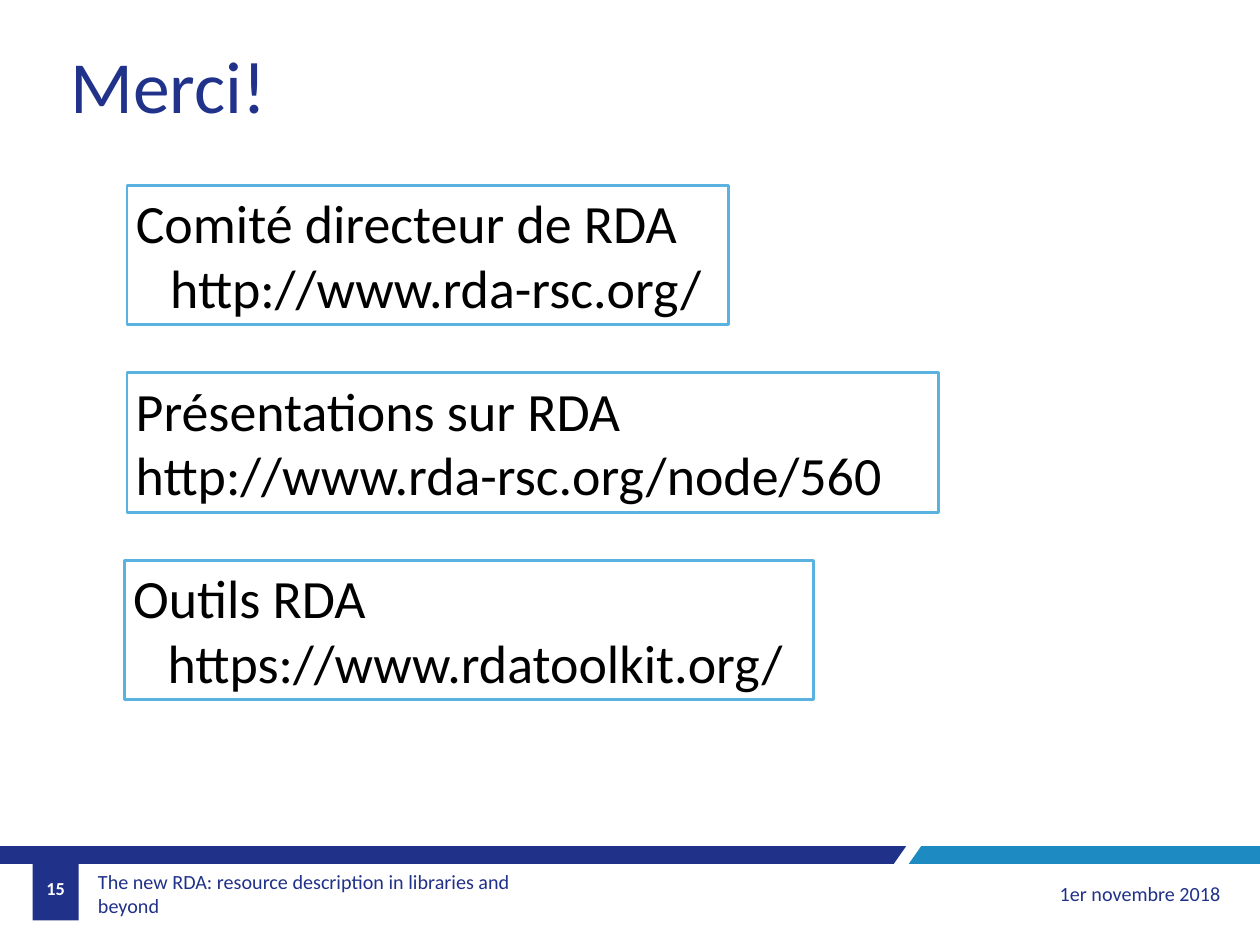
from pptx import Presentation
from pptx.dml.color import RGBColor
from pptx.enum import shapes, text
from pptx.util import Inches, Pt

NAVY, BLUE, SKY, BLACK, WHITE = "203189", "1D8BC1", "59B2DF", "000000", "FFFFFF"
FONT = "Calibri"
WIDTH, HEIGHT = 14.28, 10.71
BAR_TOP, BAR_BOTTOM = 9.59, 9.79

TITLE = "Merci!"
LINK_BOXES = [
    (1.44, 6.82, 0, "Comité directeur de RDA", "http://www.rda-rsc.org/"),
    (1.44, 9.2, None, "Présentations sur RDA", "http://www.rda-rsc.org/node/560"),
    (1.41, 7.81, 0, "Outils RDA", "https://www.rdatoolkit.org/"),
]
BOX_TOP, BOX_HEIGHT, BOX_STEP, LINK_INDENT = 2.1, 1.58, 2.125, 0.39
BARS = [
    (NAVY, [(10.27, BAR_TOP), (0, BAR_TOP), (0, BAR_BOTTOM), (10.13, BAR_BOTTOM)]),
    (BLUE, [(WIDTH, BAR_TOP), (10.44, BAR_TOP), (10.3, BAR_BOTTOM), (WIDTH, BAR_BOTTOM)]),
]
LEFT, CENTER, RIGHT = text.PP_ALIGN.LEFT, text.PP_ALIGN.CENTER, text.PP_ALIGN.RIGHT
FOOTERS = [
    ((1.04, 9.85, 5.52, 0.55), 0.07, LEFT, 16.4, NAVY, False,
     "The new RDA: resource description in libraries and beyond"),
    ((10.27, 9.85, 3.66, 0.55), 0.1, RIGHT, 16.4, NAVY, False, "1er novembre 2018"),
    ((0.37, 9.79, 0.52, 0.55), 0.1, CENTER, 14.9, WHITE, True, "15"),
]


def rgb(color):
    return RGBColor.from_string(color)


def place(sp, *box):
    sp.left, sp.top, sp.width, sp.height = map(Inches, box)


def paint(sp, color):
    sp.shadow.inherit = False
    sp.fill.solid()
    sp.fill.fore_color.rgb = rgb(color)
    sp.line.fill.background()


def write(p, words, size, color, align=LEFT, bold=False):
    p.alignment = align
    r = p.add_run()
    r.text = words
    r.font.name, r.font.size, r.font.bold = FONT, Pt(size), bold
    r.font.color.rgb = rgb(color)


def add_bar(s, color, points):
    corners = [(Inches(x), Inches(y)) for x, y in points]
    builder = s.shapes.build_freeform(*corners[0])
    builder.add_line_segments(corners[1:], close=True)
    paint(builder.convert_to_shape(), color)


def add_footer(s, box, inset, align, size, color, bold, words):
    tf = s.shapes.add_textbox(*map(Inches, box)).text_frame
    tf.word_wrap = True
    tf.vertical_anchor = text.MSO_ANCHOR.MIDDLE
    tf.margin_left = tf.margin_right = Inches(inset)
    write(tf.paragraphs[0], words, size, color, align, bold)


def add_link_box(s, top, left, width, indent, name, link):
    box = (left, top, width, BOX_HEIGHT)
    sp = s.shapes.add_shape(shapes.MSO_SHAPE.RECTANGLE, *map(Inches, box))
    sp.shadow.inherit = False
    sp.fill.background()
    sp.line.color.rgb = rgb(SKY)
    sp.line.width = Pt(2.25)
    tf = sp.text_frame
    tf.word_wrap = True
    tf.vertical_anchor = text.MSO_ANCHOR.TOP
    write(tf.paragraphs[0], name, 44, BLACK)
    p = tf.add_paragraph()
    if indent is not None:
        pPr = p._p.get_or_add_pPr()
        pPr.set("marL", str(Inches(LINK_INDENT)))
        pPr.set("indent", str(Inches(indent)))
    write(p, link, 44, BLACK)


def main():
    prs = Presentation()
    prs.slide_width, prs.slide_height = Inches(WIDTH), Inches(HEIGHT)
    s = prs.slides.add_slide(prs.slide_layouts[5])

    for color, points in BARS:
        add_bar(s, color, points)
    number_box = (0.37, BAR_TOP, 0.52, 0.84)
    paint(s.shapes.add_shape(shapes.MSO_SHAPE.RECTANGLE, *map(Inches, number_box)), NAVY)
    for footer in FOOTERS:
        add_footer(s, *footer)

    title = s.shapes.title
    place(title, 0.7, 0.4, 2.44, 1.11)
    tf = title.text_frame
    tf.word_wrap = False
    tf.auto_size = text.MSO_AUTO_SIZE.SHAPE_TO_FIT_TEXT
    tf.vertical_anchor = text.MSO_ANCHOR.TOP
    write(tf.paragraphs[0], TITLE, 60, "21328A")

    for i, link_box in enumerate(LINK_BOXES):
        add_link_box(s, BOX_TOP + i * BOX_STEP, *link_box)

    prs.save("out.pptx")


if __name__ == "__main__":
    main()
